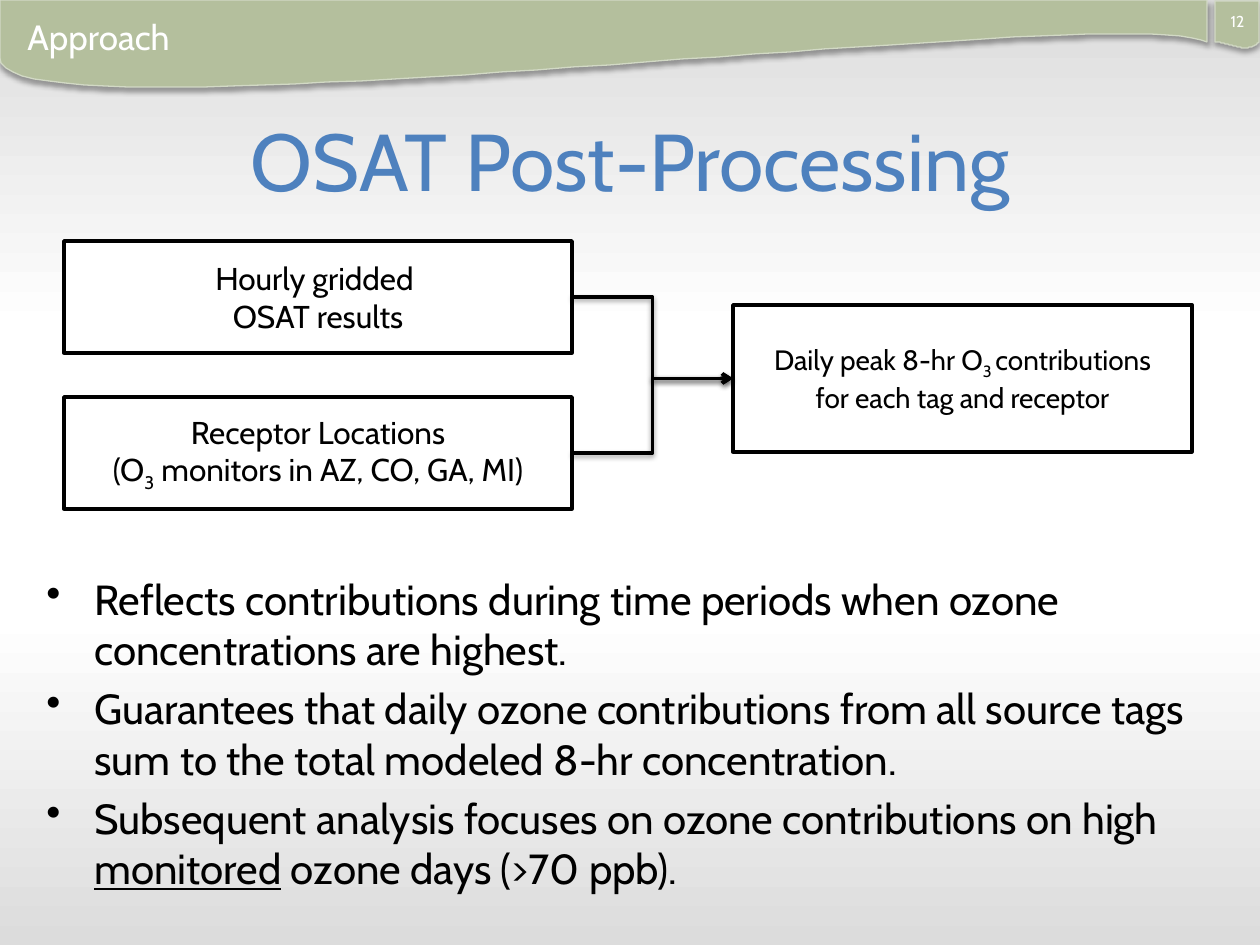
from dataclasses import dataclass

from lxml.etree import SubElement
from pptx import Presentation
from pptx.dml.color import RGBColor
from pptx.enum.shapes import MSO_CONNECTOR, MSO_SHAPE
from pptx.enum.text import MSO_ANCHOR, PP_ALIGN
from pptx.oxml.ns import qn
from pptx.util import Pt

EMU_PER_PX = 914400 / 126
TOP, LEFT, BOTTOM, RIGHT = range(4)


@dataclass(frozen=True)
class Theme:
    font: str = "Cabin"
    ink: str = "000000"
    paper: str = "FFFFFF"
    edge: str = "DCDCDC"
    band: str = "B4BF9D"
    band_line: str = "D2D9C5"
    heading: str = "4E81BE"
    title_size: int = 46
    body_size: int = 24
    section_size: int = 20
    box_size: int = 18
    result_size: int = 16
    number_size: int = 9


THEME = Theme()


def px(length):
    return round(length * EMU_PER_PX)


def rgb(value):
    return RGBColor.from_string(value)


def write_text(frame, paragraphs, size, color=THEME.ink, align=PP_ALIGN.LEFT,
               anchor=MSO_ANCHOR.TOP, line_spacing=None, bullet=False):
    frame.word_wrap = True
    frame.vertical_anchor = anchor
    for index, runs in enumerate(paragraphs):
        paragraph = frame.add_paragraph() if index else frame.paragraphs[0]
        paragraph.alignment = align
        if line_spacing:
            paragraph.line_spacing = Pt(line_spacing)
        if bullet:
            add_bullet(paragraph)
        for words, style in runs:
            for line_index, line in enumerate(words.split("\n")):
                if line_index:
                    paragraph.add_line_break()
                run = paragraph.add_run()
                run.text = line
                run.font.name = THEME.font
                run.font.size = Pt(size)
                run.font.color.rgb = rgb(color)
                if style == "underline":
                    run.font.underline = True
                elif style == "subscript":
                    run.font._element.set("baseline", "-25000")


def add_bullet(paragraph):
    paragraph.space_before = Pt(5)
    properties = paragraph._p.get_or_add_pPr()
    properties.set("marL", str(px(48)))
    properties.set("indent", str(px(-48)))
    SubElement(properties, qn("a:buChar"), char="•")


def add_label(slide, left, top, width, height, paragraphs, **text_format):
    label = slide.shapes.add_textbox(px(left), px(top), px(width), px(height))
    write_text(label.text_frame, paragraphs, **text_format)


def add_box(slide, left, top, width, height, runs, size):
    box = slide.shapes.add_shape(
        MSO_SHAPE.RECTANGLE, px(left), px(top), px(width), px(height))
    box.shadow.inherit = False
    box.fill.solid()
    box.fill.fore_color.rgb = rgb(THEME.paper)
    box.line.color.rgb = rgb(THEME.ink)
    box.line.width = Pt(2)
    write_text(box.text_frame, [runs], size=size, align=PP_ALIGN.CENTER,
               anchor=MSO_ANCHOR.MIDDLE)
    return box


def add_shadow(shape, opacity, distance):
    effects = SubElement(shape.element.spPr, qn("a:effectLst"))
    shadow = SubElement(effects, qn("a:outerShdw"), blurRad=str(Pt(3.1)),
                        dist=str(Pt(distance)), dir="5400000", rotWithShape="0")
    color = SubElement(shadow, qn("a:srgbClr"), val=THEME.ink)
    SubElement(color, qn("a:alpha"), val=str(opacity * 1000))


def add_arrow(slide, source, target):
    arrow = slide.shapes.add_connector(MSO_CONNECTOR.ELBOW, 0, 0, 0, 0)
    arrow.begin_connect(source, RIGHT)
    arrow.end_connect(target, LEFT)
    arrow.line.color.rgb = rgb(THEME.ink)
    arrow.line.width = Pt(2)
    SubElement(arrow.element.spPr.find(qn("a:ln")), qn("a:tailEnd"), type="arrow")
    add_shadow(arrow, opacity=38, distance=1.6)


def curve_points(start, first_control, second_control, end, steps=48):
    points = []
    for step in range(1, steps + 1):
        t = step / steps
        weights = ((1 - t) ** 3, 3 * t * (1 - t) ** 2, 3 * t * t * (1 - t), t ** 3)
        controls = (start, first_control, second_control, end)
        points.append(tuple(
            sum(weight * point[axis] for weight, point in zip(weights, controls))
            for axis in (0, 1)))
    return points


def add_banner(slide, left, top, right, curve):
    builder = slide.shapes.build_freeform(left, top, scale=EMU_PER_PX)
    builder.add_line_segments(
        [(right, top), curve[0], *curve_points(*curve)], close=True)
    banner = builder.convert_to_shape()
    banner.fill.solid()
    banner.fill.fore_color.rgb = rgb(THEME.band)
    banner.line.color.rgb = rgb(THEME.band_line)
    banner.line.width = Pt(0.75)
    add_shadow(banner, opacity=35, distance=1.8)


def paint_background(slide):
    fill = slide.background.fill
    fill.gradient()
    fill.gradient_angle = 270
    stops = slide.element.find(".//" + qn("a:gsLst"))
    for stop in list(stops):
        stops.remove(stop)
    for position, color in ((0, THEME.edge), (35, THEME.paper),
                            (65, THEME.paper), (100, THEME.edge)):
        stop = SubElement(stops, qn("a:gs"), pos=str(position * 1000))
        SubElement(stop, qn("a:srgbClr"), val=color)


def main():
    presentation = Presentation()
    presentation.slide_width, presentation.slide_height = px(1260), px(945)
    slide = presentation.slides.add_slide(presentation.slide_layouts[6])
    paint_background(slide)

    add_banner(slide, 0, 0, 1207, ((1207, 42), (1126, -1), (0, 147), (0, 58)))
    add_banner(slide, 1215, 1, 1259, ((1259, 42), (1246, 55), (1230, 42), (1215, 42)))
    add_label(slide, 1215, 6, 45, 42, [[("12", "")]], size=THEME.number_size,
              color=THEME.paper, align=PP_ALIGN.CENTER)
    add_label(slide, 0, 123, 1260, 88, [[("OSAT Post-Processing", "")]],
              size=THEME.title_size, color=THEME.heading, align=PP_ALIGN.CENTER,
              anchor=MSO_ANCHOR.MIDDLE, line_spacing=THEME.title_size)
    add_label(slide, 34, 567, 1193, 339, [
        [("Reflects contributions during time periods when ozone "
          "concentrations are highest.", "")],
        [("Guarantees that daily ozone contributions from all source tags "
          "sum to the total modeled 8-hr concentration.", "")],
        [("Subsequent analysis focuses on ozone contributions on high ", ""),
         ("monitored", "underline"), (" ozone days (>70 ppb).", "")],
    ], size=THEME.body_size, bullet=True)

    receptors = add_box(slide, 64, 397, 508, 112, [
        ("Receptor Locations\n(O", ""), ("3", "subscript"),
        (" monitors in AZ, CO, GA, MI)", "")], THEME.box_size)
    gridded = add_box(slide, 64, 241, 508, 112, [
        ("Hourly gridded \nOSAT results", "")], THEME.box_size)
    daily_peak = add_box(slide, 733, 305, 459, 147, [
        ("Daily peak 8-hr O", ""), ("3 ", "subscript"),
        ("contributions\nfor each tag and receptor", "")], THEME.result_size)
    for source in (gridded, receptors):
        add_arrow(slide, source, daily_peak)

    add_label(slide, 15, 9, 586, 55, [[("Approach", "")]],
              size=THEME.section_size, color=THEME.paper)
    presentation.save("out.pptx")


if __name__ == "__main__":
    main()
